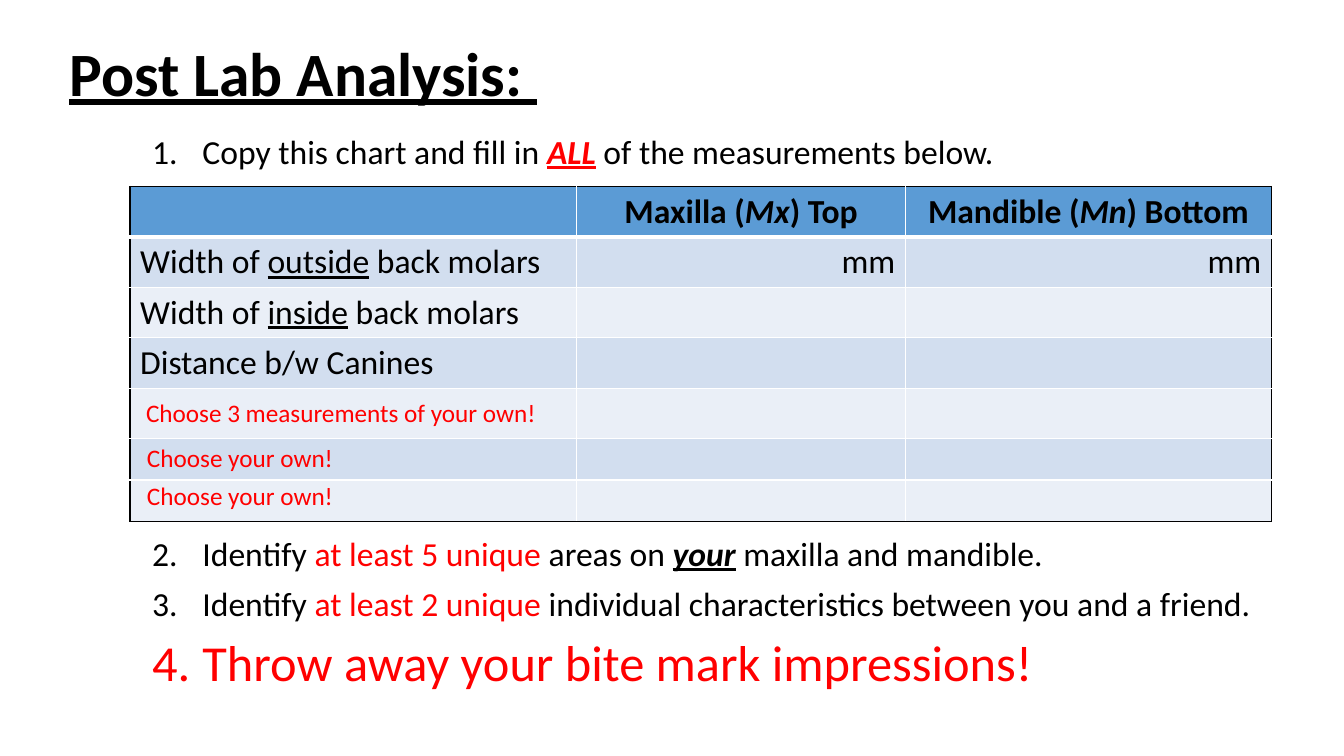
from lxml import etree
from pptx import Presentation
from pptx.dml.color import RGBColor
from pptx.enum.text import MSO_ANCHOR, PP_ALIGN
from pptx.oxml.ns import qn
from pptx.util import Inches, Pt

LEFT, CENTER, RIGHT = PP_ALIGN.LEFT, PP_ALIGN.CENTER, PP_ALIGN.RIGHT
TOP, MIDDLE = MSO_ANCHOR.TOP, MSO_ANCHOR.MIDDLE
BLACK, RED, WHITE = "000000", "FF0000", "FFFFFF"
HEADER_BLUE, BANDS = "5B9BD5", ("D2DEEF", "EAEFF7")

# Content: a paragraph is a list of (text, style) runs
STYLES = {
    "plain": {},
    "bold": {"bold": True},
    "term": {"bold": True, "italic": True},
    "under": {"underline": True},
    "title": {"bold": True, "underline": True, "size": Pt(44)},
    "strong": {"bold": True, "italic": True, "underline": True},
    "alert": {"bold": True, "italic": True, "underline": True, "color": RED},
    "red": {"color": RED},
    "hint": {"color": RED, "size": Pt(18)},
    "finale": {"color": RED, "size": Pt(36)},
}
TITLE = [("Post Lab Analysis: ", "title")]
COPY_STEP = [[("Copy this chart and fill in ", "plain"), ("ALL", "alert"),
              (" of the measurements below.", "plain")]]
LATER_STEPS = [
    [("Identify ", "plain"), ("at least 5 unique", "red"), (" areas on ", "plain"),
     ("your", "strong"), (" maxilla and mandible.", "plain")],
    [("Identify ", "plain"), ("at least 2 unique", "red"),
     (" individual characteristics between you and a friend.", "plain")],
    [("Throw away your bite mark impressions!", "finale")],
]
UNIT = [("mm", "plain")]
MEASUREMENTS = [
    [[], [("Maxilla (", "bold"), ("Mx", "term"), (") Top", "bold")],
     [("Mandible (", "bold"), ("Mn", "term"), (") Bottom", "bold")]],
    [[("Width of ", "plain"), ("outside", "under"), (" back molars", "plain")], UNIT, UNIT],
    [[("Width of ", "plain"), ("inside", "under"), (" back molars", "plain")], [], []],
    [[("Distance b/w Canines", "plain")], [], []],
    [[], [], []],
    [[], [], []],
    [[], [], []],
]
COLUMNS = [4.43, 3.26, 3.63]
ROWS = [0.5] * 5 + [0.41] * 2
HINTS = [  # text, left, top, width
    ("Choose 3 measurements of your own!", 1.35, 3.89, 4.25),
    ("Choose your own!", 1.36, 4.34, 2.77),
    ("Choose your own!", 1.36, 4.72, 2.77),
]


def rgb(color):
    return RGBColor.from_string(color)


def write(paragraph, runs):
    for text, style in runs:
        run = paragraph.add_run()
        run.text = text
        look = {"name": "Calibri", "size": Pt(24), "color": BLACK, **STYLES[style]}
        run.font.color.rgb = rgb(look.pop("color"))
        for attribute, value in look.items():
            setattr(run.font, attribute, value)


def add_text(slide, box, paragraphs, anchor=TOP, spacing=0.9, first_number=None):
    frame = slide.shapes.add_textbox(*map(Inches, box)).text_frame
    frame.word_wrap = True
    frame.vertical_anchor = anchor
    for index, runs in enumerate(paragraphs):
        paragraph = frame.add_paragraph() if index else frame.paragraphs[0]
        paragraph.line_spacing = spacing
        if index:
            paragraph.space_before = Pt(10)
        if first_number:
            props = paragraph._p.get_or_add_pPr()
            props.set("marL", str(Inches(0.5)))
            props.set("indent", str(-Inches(0.5)))
            etree.SubElement(props, qn("a:buFont"), typeface="+mj-lt")
            etree.SubElement(props, qn("a:buAutoNum"), type="arabicPeriod",
                             startAt=str(first_number))
        write(paragraph, runs)


def add_border(cell, side, color, points):
    line = etree.SubElement(cell._tc.get_or_add_tcPr(), qn("a:ln" + side),
                            w=str(Pt(points)))
    fill = etree.SubElement(line, qn("a:solidFill"))
    etree.SubElement(fill, qn("a:srgbClr"), val=color)


def add_measurements(slide, left, top):
    last_row, last_column = len(ROWS) - 1, len(COLUMNS) - 1
    table = slide.shapes.add_table(
        len(ROWS), len(COLUMNS), Inches(left), Inches(top),
        Inches(sum(COLUMNS)), Inches(sum(ROWS))).table
    for column, width in zip(table.columns, COLUMNS):
        column.width = Inches(width)
    for r, (row, height) in enumerate(zip(table.rows, ROWS)):
        row.height = Inches(height)
        for c, cell in enumerate(row.cells):
            # Black outer frame, white inner rules, thick rule under the header
            edges = {"L": c == 0, "R": c == last_column, "T": r == 0, "B": r == last_row}
            for side, outer in edges.items():
                thick = (r, side) in ((0, "B"), (1, "T"))
                add_border(cell, side, BLACK if outer else WHITE, 3 if thick else 1)
            cell.fill.solid()
            cell.fill.fore_color.rgb = rgb(BANDS[(r - 1) % 2] if r else HEADER_BLUE)
            paragraph = cell.text_frame.paragraphs[0]
            paragraph.alignment = CENTER if r == 0 else RIGHT if c else LEFT
            write(paragraph, MEASUREMENTS[r][c])


def main():
    deck = Presentation()
    deck.slide_width, deck.slide_height = Inches(13.33), Inches(7.5)
    slide = deck.slides.add_slide(deck.slide_layouts[6])

    # Title and numbered steps around the table
    add_text(slide, (0.59, 0.03, 11.5, 1.45), [TITLE], anchor=MIDDLE)
    add_text(slide, (1.41, 1.29, 11.5, 0.5), COPY_STEP, first_number=1)
    add_text(slide, (1.41, 5.28, 11.5, 1.69), LATER_STEPS, first_number=2)

    # Table with hints over its empty rows
    add_measurements(slide, 1.29, 1.85)
    for text, left, top, width in HINTS:
        add_text(slide, (left, top, width, 0.4), [[(text, "hint")]], spacing=1.0)

    deck.save("out.pptx")


if __name__ == "__main__":
    main()
